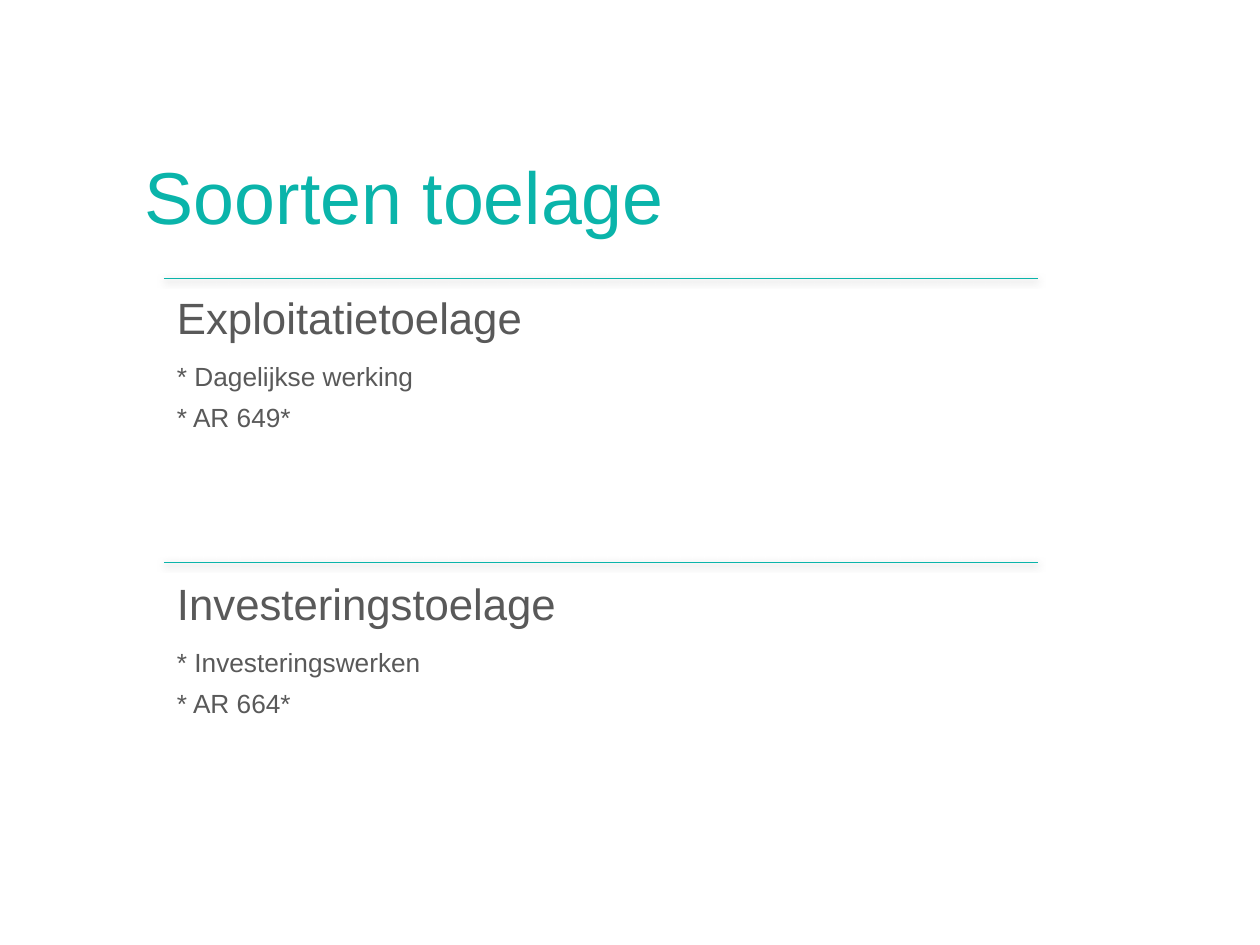
from dataclasses import dataclass

from lxml.etree import SubElement as Sub
from pptx import Presentation
from pptx.dml.color import RGBColor as Color
from pptx.enum.shapes import MSO_CONNECTOR as Link
from pptx.enum.text import MSO_ANCHOR as Anchor, MSO_AUTO_SIZE as Fit, PP_ALIGN as Align
from pptx.oxml.ns import qn
from pptx.shapes.placeholder import SlidePlaceholder as Holder
from pptx.slide import Slide
from pptx.util import Emu, Pt

TEAL = Color(0x0A, 0xB4, 0xAA)
GRAY = Color(0x59, 0x59, 0x59)
FONT = "Arial"
LEFT, WIDE = 164, 874
PAD = 13


@dataclass
class Part:
    rule: int
    top: int
    head: str
    items: list[str]


PARTS = [
    Part(278, 278, "Exploitatietoelage", ["* Dagelijkse werking", "* AR 649*"]),
    Part(562, 564, "Investeringstoelage", ["* Investeringswerken", "* AR 664*"]),
]


def px(n: int) -> Emu:
    return Emu(round(n * 914400 / 126))


def place(box: Holder, left: int, top: int, wide: int, high: int,
          pad: int, anchor: Anchor) -> None:
    box.left, box.top, box.width, box.height = map(px, (left, top, wide, high))
    frame = box.text_frame
    frame.word_wrap = True
    frame.auto_size = Fit.NONE
    frame.vertical_anchor = anchor
    frame.margin_left = frame.margin_right = px(pad)
    frame.margin_top = frame.margin_bottom = px(pad)


def style(para, size: int, color: Color, after: float, pitch: float = 1.0) -> None:
    """Set a left-aligned paragraph without bullet or indent."""
    props = para._p.get_or_add_pPr()
    props.set("marL", "0")
    props.set("indent", "0")
    Sub(props, qn("a:buNone"))
    para.alignment = Align.LEFT
    para.line_spacing = pitch
    para.space_before = Pt(0)
    para.space_after = Pt(after)
    para.font.name = FONT
    para.font.size = Pt(size)
    para.font.color.rgb = color


def draw_rule(slide: Slide, top: int) -> None:
    """Draw a thin line with a soft shadow below it."""
    line = slide.shapes.add_connector(
        Link.STRAIGHT, px(LEFT), px(top), px(LEFT + WIDE), px(top))
    line.line.color.rgb = TEAL
    line.line.width = Pt(0.5)
    effects = Sub(line._element.spPr, qn("a:effectLst"))
    shade = Sub(effects, qn("a:outerShdw"), blurRad=str(Pt(4.5)), dist=str(Pt(1.5)),
                dir="5400000", algn="ctr", rotWithShape="0")
    tint = Sub(shade, qn("a:srgbClr"), val="000000")
    Sub(tint, qn("a:alpha"), val="63000")


def draw_part(slide: Slide, box: Holder, part: Part) -> None:
    draw_rule(slide, part.rule)
    place(box, LEFT, part.top, WIDE, 286, PAD, Anchor.TOP)
    box.text_frame.text = "\n".join([part.head, *part.items])
    head, *items = box.text_frame.paragraphs
    style(head, 25, GRAY, 9.5)
    for item in items:
        style(item, 15, GRAY, 5.6)


def main() -> None:
    deck = Presentation()
    deck.slide_width, deck.slide_height = px(1260), px(945)
    slide = deck.slides.add_slide(deck.slide_layouts.get_by_name("Two Content"))
    title, *boxes = slide.placeholders
    place(title, 145, 86, WIDE, 154, 0, Anchor.BOTTOM)
    title.text_frame.text = "Soorten toelage"
    style(title.text_frame.paragraphs[0], 42, TEAL, 6, 0.9)
    for box, part in zip(boxes, PARTS):
        draw_part(slide, box, part)
    deck.save("out.pptx")


if __name__ == "__main__":
    main()
